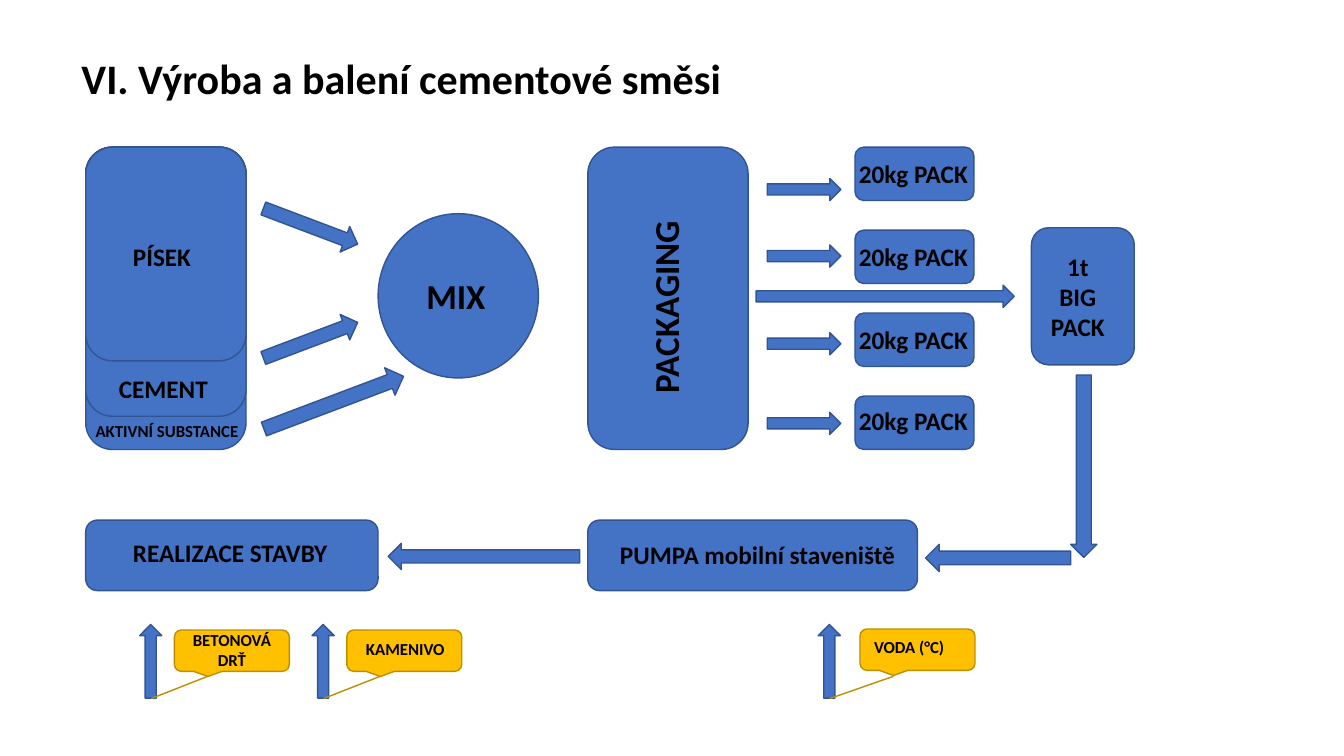
from dataclasses import dataclass

from lxml import etree
from pptx import Presentation
from pptx.dml.color import RGBColor
from pptx.enum.shapes import MSO_CONNECTOR, MSO_SHAPE
from pptx.enum.text import MSO_AUTO_SIZE, PP_ALIGN
from pptx.oxml.ns import qn
from pptx.util import Inches, Pt

ROUND = MSO_SHAPE.ROUNDED_RECTANGLE
CIRCLE = MSO_SHAPE.FLOWCHART_CONNECTOR
RIGHT = MSO_SHAPE.RIGHT_ARROW
DOWN = MSO_SHAPE.DOWN_ARROW
CALLOUT = MSO_SHAPE.ROUNDED_RECTANGULAR_CALLOUT
LINE = MSO_CONNECTOR.STRAIGHT
FIT = MSO_AUTO_SIZE.SHAPE_TO_FIT_TEXT
LEFT, CENTER = PP_ALIGN.LEFT, PP_ALIGN.CENTER


@dataclass(frozen=True)
class Theme:
    font: str = "Calibri"
    ink: str = "000000"
    blue: str = "4472C4"
    navy: str = "325491"
    gold: str = "FFC000"
    ochre: str = "BD8E00"
    title: int = 30
    large: int = 25
    body: int = 18
    small: int = 12
    stroke: int = 1


class Board:
    def __init__(self, slide, theme):
        self.slide = slide
        self.theme = theme

    def shape(self, kind, box, fill, edge, turn=0):
        item = self.slide.shapes.add_shape(kind, *map(Inches, box))
        item.rotation = turn
        item.shadow.inherit = False
        item.fill.solid()
        item.fill.fore_color.rgb = RGBColor.from_string(fill)
        item.line.color.rgb = RGBColor.from_string(edge)
        item.line.width = Pt(self.theme.stroke)
        return item

    def block(self, box, kind=ROUND):
        return self.shape(kind, box, self.theme.blue, self.theme.navy)

    def arrow(self, box, turn=0, kind=RIGHT):
        return self.shape(kind, box, self.theme.blue, self.theme.navy, turn)

    def callout(self, box):
        return self.shape(CALLOUT, box, self.theme.gold, self.theme.ochre)

    def line(self, start, end):
        item = self.slide.shapes.add_connector(
            LINE, *map(Inches, (*start, *end)))
        item.line.color.rgb = RGBColor.from_string(self.theme.ochre)
        item.line.width = Pt(self.theme.stroke)
        etree.SubElement(item._element.spPr, qn("a:effectLst"))

    def text(self, words, box, size, align=LEFT, turn=0):
        item = self.slide.shapes.add_textbox(*map(Inches, box))
        item.rotation = turn
        frame = item.text_frame
        frame.word_wrap = True
        frame.auto_size = FIT
        frame.text = words
        style = {"name": self.theme.font, "size": Pt(size), "bold": True}
        for para in frame.paragraphs:
            para.alignment = align
            for run in para.runs:
                for key, value in style.items():
                    setattr(run.font, key, value)
                run.font.color.rgb = RGBColor.from_string(self.theme.ink)


def main():
    deck = Presentation()
    deck.slide_width, deck.slide_height = Inches(13.33), Inches(7.5)
    theme = Theme()
    board = Board(deck.slides.add_slide(deck.slide_layouts[6]), theme)

    # Title
    board.text("VI. Výroba a balení cementové směsi",
               (0.71, 0.47, 7.21, 0.61), theme.title)

    # Raw material stack
    top, wide, tall = 1.46, 1.59, 3
    for depth in (tall, 2.06, 2.67, 2.12):
        board.block((0.85, top, wide, depth))
    board.text("PÍSEK", (1.22, 2.34, 1.15, 0.4), theme.body)
    board.text("CEMENT", (1.08, 3.65, 1.42, 0.4), theme.body)
    board.text("AKTIVNÍ SUBSTANCE", (0.85, 4.12, 1.64, 0.3), theme.small)

    # Mixing
    tilt = 20.7
    board.arrow((2.58, 2.11, 1, 0.27), tilt)
    board.arrow((2.58, 3.24, 1, 0.27), 360 - tilt)
    board.arrow((2.57, 3.85, 1.48, 0.29), 360 - tilt)
    board.block((3.75, 2.12, wide, 1.63), CIRCLE)
    board.text("MIX", (4.13, 2.67, 1.12, 0.52), theme.large)

    # Packaging
    board.block((5.83, top, wide, tall))
    board.text("PACKAGING", (5.39, 2.53, 2.42, 0.52), theme.large, turn=270)

    # Small packs: arrow top and label top for each row
    rows = ((1.77, 1.52), (2.43, 2.34), (3.3, 3.17), (4.09, 3.97))
    for i, (shaft, label) in enumerate(rows):
        board.arrow((7.61, shaft, 0.73, 0.22))
        board.block((8.48, top + i * 0.823, 1.18, 0.53))
        board.text("20kg PACK", (8.42, label, 1.3, 0.4), theme.body)

    # Big pack
    board.arrow((7.5, 2.83, 2.56, 0.22))
    board.block((10.23, 2.26, 1.02, 1.36))
    board.text("1t\nBIG\nPACK", (10.04, 2.44, 1.3, 1.01), theme.body, CENTER)

    # Pump and building site
    drop = board.arrow((10.62, 3.72, 0.26, 1.81), kind=DOWN)
    drop.adjustments[0] = 0.57
    board.arrow((9.18, 5.4, 1.44, 0.27), 180)
    board.block((5.83, 5.16, 3.27, 0.7))
    board.text("PUMPA mobilní staveniště", (6.05, 5.3, 3.05, 0.4), theme.body)
    board.arrow((3.85, 5.39, 1.9, 0.26), 180)
    board.block((0.85, 5.16, 2.9, 0.7))
    board.text("REALIZACE STAVBY", (1.22, 5.28, 2.28, 0.4), theme.body)

    # Additions: arrow centre, callout left and top, tip, label place
    extras = (
        ("BETONOVÁ\nDRŤ", 1.5, 1.73, 6.25, 2.06, (1.69, 6.2), CENTER),
        ("KAMENIVO", 3.21, 3.44, 6.25, 3.77, (3.41, 6.29), CENTER),
        ("VODA (°C)", 8.23, 8.53, 6.24, 8.86, (8.57, 6.27), LEFT),
    )
    for words, mid, left, high, tip, place, align in extras:
        board.arrow((mid - 0.37, 6.45, 0.73, 0.22), 270)
        board.callout((left, high, 1.14, 0.41))
        board.line((mid, 6.93), (tip, 6.71))
        deep = 0.5 if "\n" in words else 0.3
        board.text(words, (*place, 1.22, deep), theme.small, align)

    deck.save("out.pptx")


if __name__ == "__main__":
    main()
